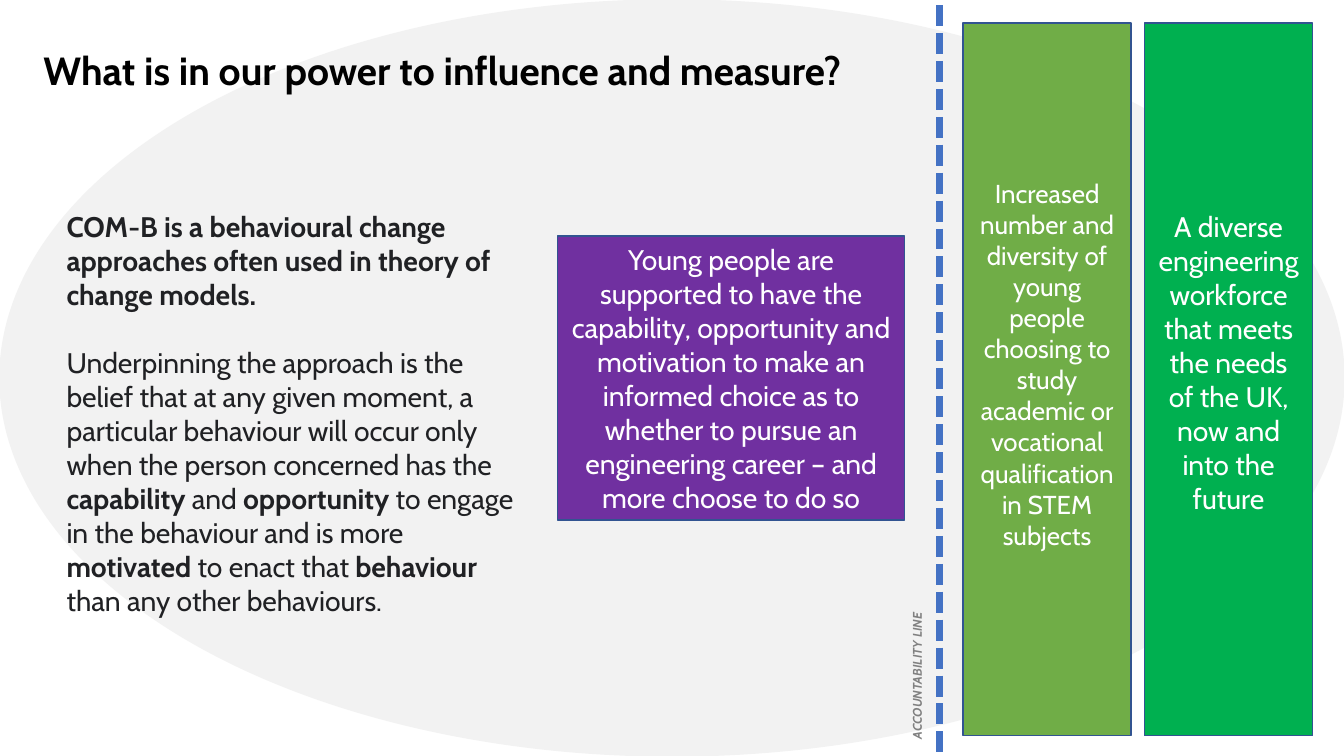
from lxml import etree
from pptx import Presentation
from pptx.dml.color import RGBColor
from pptx.enum.dml import MSO_LINE
from pptx.enum.shapes import MSO_CONNECTOR, MSO_SHAPE
from pptx.enum.text import MSO_ANCHOR, MSO_AUTO_SIZE, PP_ALIGN
from pptx.oxml.ns import qn
from pptx.util import Inches, Pt

WHITE = RGBColor(0xFF, 0xFF, 0xFF)
BLACK = RGBColor(0, 0, 0)
INK = RGBColor(0x20, 0x21, 0x24)
GREY = RGBColor(0x80, 0x80, 0x80)
PALE = RGBColor(0xF2, 0xF2, 0xF2)
EDGE = RGBColor(0x32, 0x54, 0x91)
BLUE = RGBColor(0x44, 0x72, 0xC4)
PURPLE = RGBColor(0x70, 0x30, 0xA0)
LIME = RGBColor(0x70, 0xAD, 0x47)
GREEN = RGBColor(0x00, 0xB0, 0x50)

CENTER, LEFT = PP_ALIGN.CENTER, PP_ALIGN.LEFT
MIDDLE, TOP = MSO_ANCHOR.MIDDLE, MSO_ANCHOR.TOP
NO_FIT = MSO_AUTO_SIZE.NONE
RECT, OVAL = MSO_SHAPE.RECTANGLE, MSO_SHAPE.OVAL
STRAIGHT = MSO_CONNECTOR.STRAIGHT
DASH = MSO_LINE.SQUARE_DOT

WIDE, HIGH = 13.33, 7.5
FACE = "Cabin"
TEXT = 20.2

GOALS = [
    (LIME, 18.5, 0.36,
     "Increased number and diversity of young people choosing to study "
     "academic or vocational qualification in STEM subjects"),
    (GREEN, TEXT, 0.39,
     "A diverse engineering workforce that meets the needs of the UK, "
     "now and into the future"),
]
CHOICE = (
    "Young people are supported to have the capability, opportunity and "
    "motivation to make an informed choice as to whether to pursue an "
    "engineering career – and more choose to do so"
)
MODEL = [
    [("COM-B is a behavioural change approaches often used in theory of "
      "change models.", True)],
    [("Underpinning the approach is the belief that at any given moment, a "
      "particular behaviour will occur only when the person concerned has "
      "the ", False),
     ("capability", True), (" and ", False), ("opportunity", True),
     (" to engage in the behaviour and is more ", False),
     ("motivated", True), (" to enact that ", False), ("behaviour", True),
     (" than any other behaviours.", False)],
]


def style(para, size, color, align=LEFT, bold=None):
    para.alignment = align
    para.font.name = FACE
    para.font.size = Pt(size)
    para.font.color.rgb = color
    para.font.bold = bold


def place(holder, box):
    holder.left, holder.top, holder.width, holder.height = map(Inches, box)
    frame = holder.text_frame
    frame.word_wrap = True
    frame.auto_size = NO_FIT
    frame.vertical_anchor = TOP
    return frame


def solid(slide, kind, box, fill, edge):
    shape = slide.shapes.add_shape(kind, *map(Inches, box))
    shape.shadow.inherit = False
    shape.fill.solid()
    shape.fill.fore_color.rgb = fill
    shape.line.color.rgb = edge
    shape.line.width = Pt(1)
    return shape


def add_back(slide, box):
    oval = solid(slide, OVAL, box, PALE, PALE)
    slide.shapes._spTree.insert(2, oval._element)


def add_title(slide, box):
    para = place(slide.shapes.title, box).paragraphs[0]
    para.text = "What is in our power to influence and measure?"
    style(para, 28, BLACK, bold=True)


def add_model(slide, box):
    frame = place(slide.placeholders[1], box)
    for index, parts in enumerate(MODEL):
        para = frame.paragraphs[0] if index == 0 else frame.add_paragraph()
        props = para._p.get_or_add_pPr()
        props.set("marL", "0")
        props.set("indent", "0")
        etree.SubElement(props, qn("a:buNone"))
        para.space_before = Pt(24 * index)
        style(para, TEXT, INK)
        for words, bold in parts:
            run = para.add_run()
            run.text = words
            run.font.bold = bold


def add_panel(slide, box, fill, size, words, base=0.05):
    frame = solid(slide, RECT, box, fill, EDGE).text_frame
    frame.word_wrap = True
    frame.vertical_anchor = MIDDLE
    frame.margin_bottom = Inches(base)
    para = frame.paragraphs[0]
    para.text = words
    style(para, size, WHITE, CENTER)


def add_goals(slide, box):
    left, top, width, height = box
    gap = 0.13
    each = (width - gap) / 2
    for index, (fill, size, base, words) in enumerate(GOALS):
        spot = (left + index * (each + gap), top, each, height)
        add_panel(slide, spot, fill, size, words, base)


def add_limit(slide, box):
    left, top, width, height = box
    line = slide.shapes.add_connector(
        STRAIGHT, *map(Inches, (left + 0.35, top, left + 0.35, top + HIGH)))
    line.line.color.rgb = BLUE
    line.line.width = Pt(5)
    line.line.dash_style = DASH
    etree.SubElement(line._element.spPr, qn("a:effectLst"))

    label = slide.shapes.add_textbox(
        *map(Inches, (left, top + height - 2.15, width, 2.15)))
    frame = label.text_frame
    frame.word_wrap = True
    frame._txBody.bodyPr.set("vert", "vert270")
    para = frame.paragraphs[0]
    para.text = "ACCOUNTABILITY LINE"
    style(para, 9, GREY, CENTER, True)
    para.font.italic = True


def main():
    deck = Presentation()
    deck.slide_width, deck.slide_height = Inches(WIDE), Inches(HIGH)
    slide = deck.slides.add_slide(deck.slide_layouts[1])
    add_back(slide, (0, 0, WIDE, HIGH))
    add_title(slide, (0.33, 0.41, 9.07, 1.04))
    add_model(slide, (0.56, 2.03, 4.75, 4.51))
    add_panel(slide, (5.53, 2.34, 3.44, 2.82), PURPLE, TEXT, CHOICE)
    add_limit(slide, (8.97, 0.05, 0.5, 7.73))
    add_goals(slide, (9.55, 0.23, 3.47, 7.07))
    deck.save("out.pptx")


if __name__ == "__main__":
    main()
